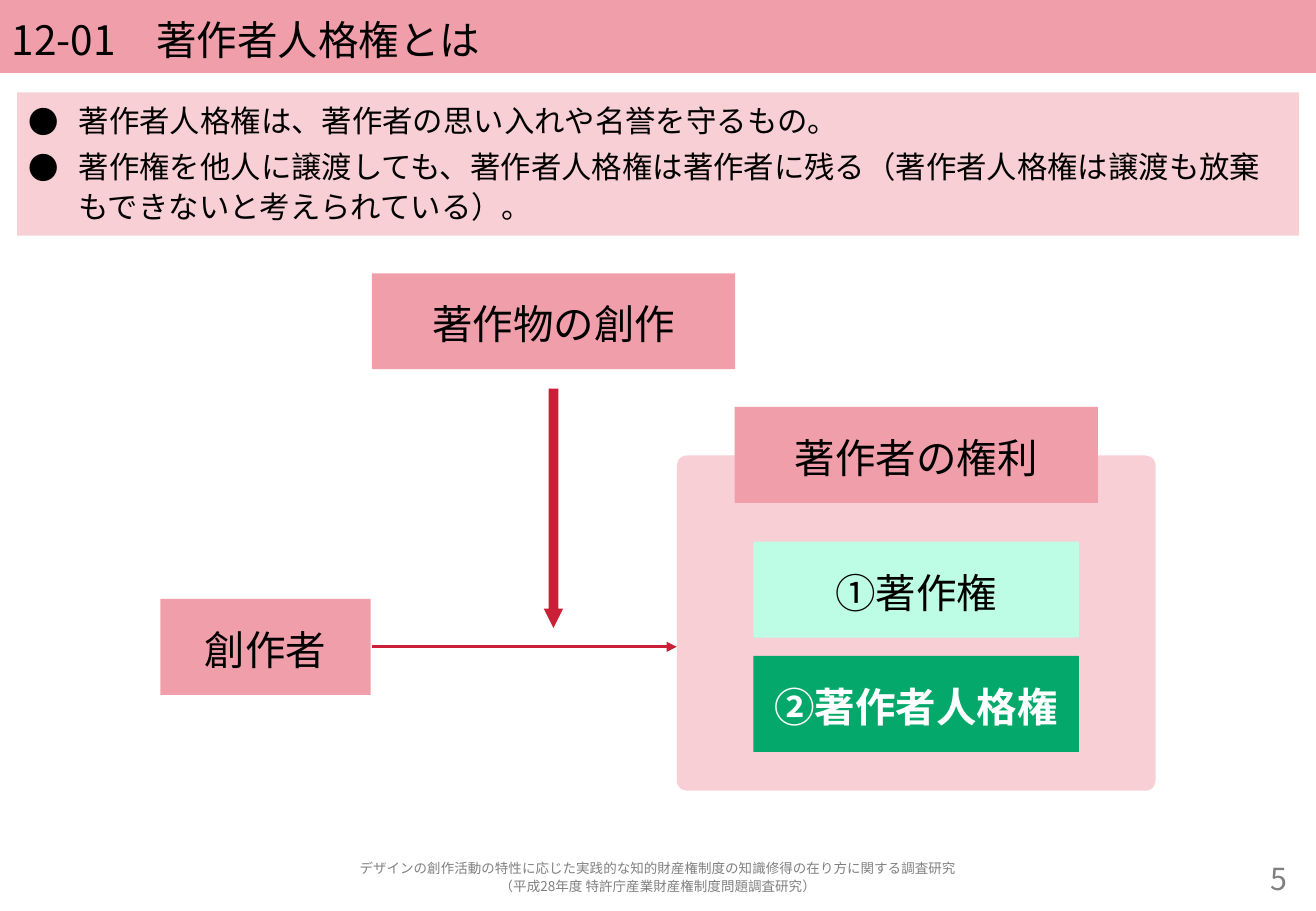
"""Builds the slide explaining the moral rights of authors."""
from lxml import etree
from pptx import Presentation
from pptx.dml.color import RGBColor
from pptx.enum.shapes import MSO_CONNECTOR, MSO_SHAPE
from pptx.enum.text import MSO_ANCHOR, PP_ALIGN
from pptx.oxml.ns import qn
from pptx.util import Inches, Pt

FONT = "Noto Sans CJK JP"
BLACK = RGBColor(0x00, 0x00, 0x00)
WHITE = RGBColor(0xFF, 0xFF, 0xFF)
GRAY = RGBColor(0x80, 0x80, 0x80)
PINK = RGBColor(0xF0, 0x9F, 0xAA)
PALE_PINK = RGBColor(0xF8, 0xCF, 0xD5)
CRIMSON = RGBColor(0xC9, 0x1F, 0x37)
MINT = RGBColor(0xBD, 0xFD, 0xE5)
GREEN = RGBColor(0x04, 0xA8, 0x6A)
RECTANGLE = MSO_SHAPE.RECTANGLE
ROUNDED = MSO_SHAPE.ROUNDED_RECTANGLE
DOWN_ARROW = MSO_SHAPE.DOWN_ARROW
STRAIGHT = MSO_CONNECTOR.STRAIGHT
TOP, MIDDLE = MSO_ANCHOR.TOP, MSO_ANCHOR.MIDDLE
LEFT, CENTER, RIGHT = PP_ALIGN.LEFT, PP_ALIGN.CENTER, PP_ALIGN.RIGHT

PAGE_WIDTH, PAGE_HEIGHT = 10.83, 7.5
MARGIN = 0.14
CONTENT_WIDTH = PAGE_WIDTH - 2 * MARGIN
BOX_HEIGHT = 0.79
HEADING_WIDTH = 2.99
RIGHT_WIDTH = 2.68
FOOTER_TOP, FOOTER_HEIGHT = 7.06, 0.31
NUMBER_WIDTH = 1.34
BULLET_INDENT = 0.41

TITLE = "12-01　著作者人格権とは"
POINTS = [
    "著作者人格権は、著作者の思い入れや名誉を守るもの。",
    "著作権を他人に譲渡しても、著作者人格権は著作者に残る（著作者人格権は譲渡も放棄もできないと考えられている）。",
]
FOOTER = [
    "デザインの創作活動の特性に応じた実践的な知的財産権制度の知識修得の在り方に関する調査研究",
    "（平成28年度 特許庁産業財産権制度問題調査研究）",
]
PAGE_NUMBER = "5"

CREATOR_LEFT, CREATOR_TOP, CREATOR_WIDTH = 1.32, 4.93, 1.73
CREATION_LEFT = 3.06
PANEL = (5.57, 3.75, 3.94, 2.76)
PANEL_CENTER = PANEL[0] + PANEL[2] / 2
HEADING_LEFT = PANEL_CENTER - HEADING_WIDTH / 2
RIGHT_LEFT = PANEL_CENTER - RIGHT_WIDTH / 2
ARROW_WIDTH = 0.16
ARROW_LEFT = CREATION_LEFT + (HEADING_WIDTH - ARROW_WIDTH) / 2
FLOW_Y = CREATOR_TOP + BOX_HEIGHT / 2

BOXES = [
    ("創作者", CREATOR_LEFT, CREATOR_TOP, CREATOR_WIDTH, PINK, BLACK, False),
    ("①著作権", RIGHT_LEFT, 4.46, RIGHT_WIDTH, MINT, BLACK, False),
    ("②著作者人格権", RIGHT_LEFT, 5.4, RIGHT_WIDTH, GREEN, WHITE, True),
    ("著作者の権利", HEADING_LEFT, 3.35, HEADING_WIDTH, PINK, BLACK, False),
    ("著作物の創作", CREATION_LEFT, 2.25, HEADING_WIDTH, PINK, BLACK, False),
]


def add_filled(page, kind, place, color):
    shape = page.shapes.add_shape(kind, *map(Inches, place))
    shape.shadow.inherit = False
    shape.fill.solid()
    shape.fill.fore_color.rgb = color
    shape.line.fill.background()
    return shape


def write(shape, lines, size, color, align=CENTER, anchor=MIDDLE, bold=False):
    frame = shape.text_frame
    frame.word_wrap = True
    frame.vertical_anchor = anchor
    frame.margin_left = frame.margin_right = Inches(0.1)
    frame.margin_top = frame.margin_bottom = Inches(0.05)
    for index, line in enumerate(lines):
        para = frame.add_paragraph() if index else frame.paragraphs[0]
        para.alignment = align
        para.line_spacing = 1.1
        span = para.add_run()
        span.text = line
        span.font.size = Pt(size)
        span.font.bold = bold
        span.font.color.rgb = color
        span.font.name = FONT
        etree.SubElement(span.font._element, qn("a:ea"), typeface=FONT)
    return frame.paragraphs


def add_bullet(para):
    para.space_before = Pt(3.6)
    properties = para._p.get_or_add_pPr()
    properties.set("marL", str(Inches(BULLET_INDENT)))
    properties.set("indent", str(-Inches(BULLET_INDENT)))
    etree.SubElement(properties, qn("a:buFont"), typeface=FONT)
    etree.SubElement(properties, qn("a:buChar"), char="●")


def add_flow(page, start, end, y):
    flow = page.shapes.add_connector(
        STRAIGHT, Inches(start), Inches(y), Inches(end), Inches(y))
    flow.line.color.rgb = CRIMSON
    flow.line.width = Pt(2)
    etree.SubElement(flow.line._get_or_add_ln(), qn("a:tailEnd"), type="triangle")
    etree.SubElement(flow._element.spPr, qn("a:effectLst"))


def add_label(page, place, lines, size, align):
    label = page.shapes.add_textbox(*map(Inches, place))
    write(label, lines, size, GRAY, align)


def main():
    deck = Presentation()
    deck.slide_width, deck.slide_height = Inches(PAGE_WIDTH), Inches(PAGE_HEIGHT)
    page = deck.slides.add_slide(deck.slide_layouts[6])

    title = add_filled(page, RECTANGLE, (0, 0, PAGE_WIDTH, 0.6), PINK)
    write(title, [TITLE], 24, BLACK, LEFT)
    summary = add_filled(
        page, RECTANGLE, (MARGIN, 0.76, CONTENT_WIDTH, 1.18), PALE_PINK)
    for para in write(summary, POINTS, 18, BLACK, LEFT, TOP):
        add_bullet(para)

    panel = add_filled(page, ROUNDED, PANEL, PALE_PINK)
    panel.adjustments[0] = 0.03
    for text, left, top, width, fill, color, bold in BOXES:
        box = add_filled(page, RECTANGLE, (left, top, width, BOX_HEIGHT), fill)
        write(box, [text], 24, color, bold=bold)

    arrow = add_filled(
        page, DOWN_ARROW, (ARROW_LEFT, 3.2, ARROW_WIDTH, 1.97), CRIMSON)
    arrow.adjustments[0], arrow.adjustments[1] = 0.5, 1
    add_flow(page, CREATION_LEFT, PANEL[0], FLOW_Y)

    number_left = PAGE_WIDTH - MARGIN - NUMBER_WIDTH
    add_label(page, (number_left, FOOTER_TOP, NUMBER_WIDTH, FOOTER_HEIGHT),
              [PAGE_NUMBER], 18, RIGHT)
    add_label(page, (MARGIN, FOOTER_TOP, CONTENT_WIDTH, FOOTER_HEIGHT),
              FOOTER, 8, CENTER)
    deck.save("out.pptx")


if __name__ == "__main__":
    main()
